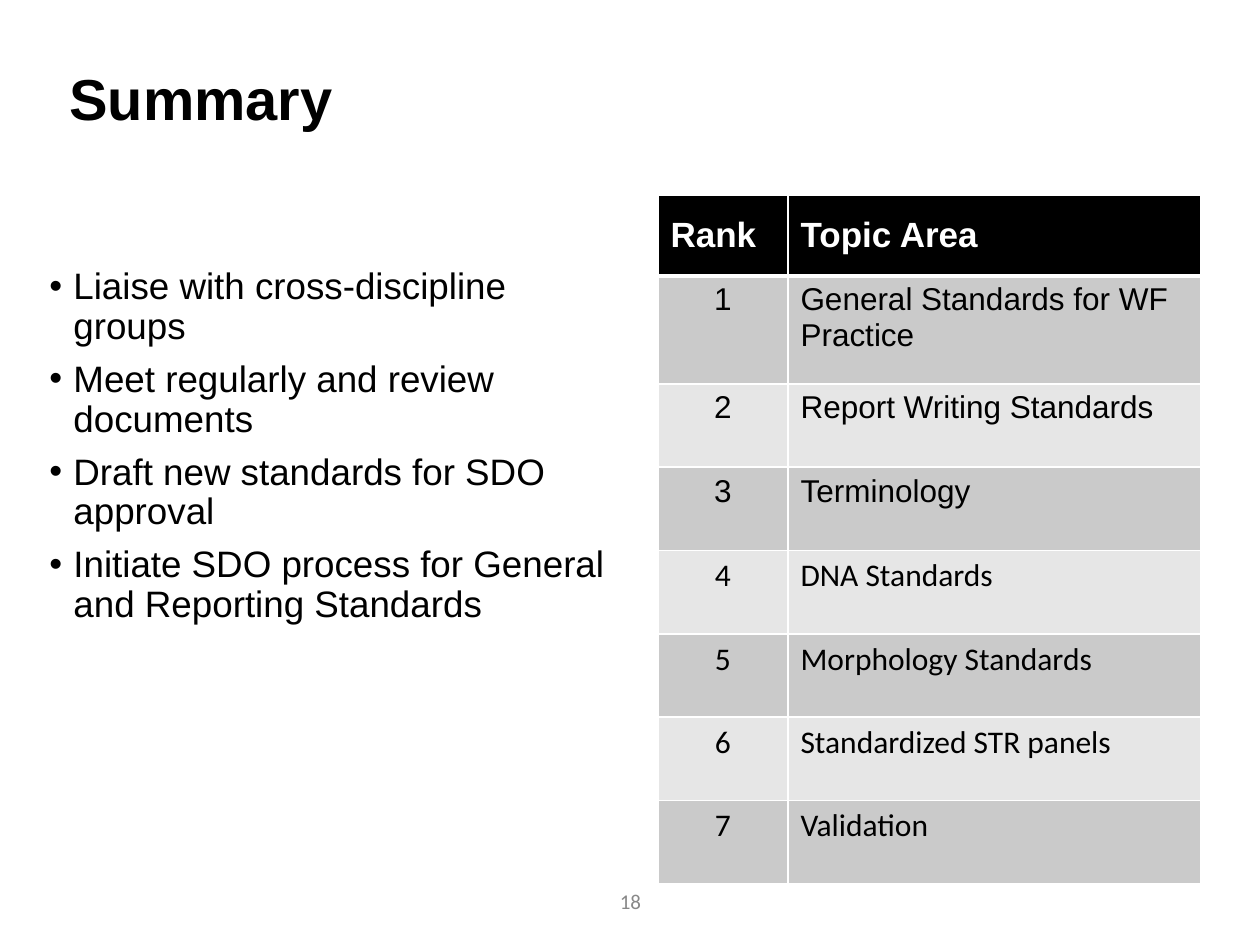
from lxml import etree
from pptx import Presentation
from pptx import util as u
from pptx.dml.color import RGBColor
from pptx.enum import text
from pptx.oxml import ns

PX = 914400 / 126
BLACK = RGBColor(0x00, 0x00, 0x00)
WHITE = RGBColor(0xFF, 0xFF, 0xFF)
DARK_BAND = RGBColor(0xCA, 0xCA, 0xCA)
LIGHT_BAND = RGBColor(0xE6, 0xE6, 0xE6)
PAGE_GRAY = RGBColor(0x88, 0x88, 0x88)
CENTER = text.PP_ALIGN.CENTER
MIDDLE = text.MSO_ANCHOR.MIDDLE

BULLETS = [
    "Liaise with cross-discipline groups",
    "Meet regularly and review documents",
    "Draft new standards for SDO approval",
    "Initiate SDO process for General and Reporting Standards",
]
TOPICS = [
    ("General Standards for WF Practice", "Arial"),
    ("Report Writing Standards", "Arial"),
    ("Terminology", "Arial"),
    ("DNA Standards", "Calibri"),
    ("Morphology Standards", "Calibri"),
    ("Standardized STR panels", "Calibri"),
    ("Validation", "Calibri"),
]


def px(length):
    return u.Emu(round(length * PX))


def write(para, words, size, font="Arial", color=BLACK, bold=False, align=None, spacing=None):
    span = para.add_run()
    span.text = words
    span.font.name = font
    span.font.size = u.Pt(size)
    span.font.bold = bold
    span.font.color.rgb = color
    para.alignment = align
    para.line_spacing = spacing


def add_frame(page, box, anchor=text.MSO_ANCHOR.TOP):
    """Add a wrapping text box and return its text frame."""
    frame = page.shapes.add_textbox(*map(px, box)).text_frame
    frame.word_wrap = True
    frame.vertical_anchor = anchor
    return frame


def add_line(page, box, words, size, **format):
    write(add_frame(page, box, MIDDLE).paragraphs[0], words, size, **format)


def set_bullet(para, indent):
    props = para._p.get_or_add_pPr()
    props.set("marL", str(px(indent)))
    props.set("indent", str(-px(indent)))
    color = etree.SubElement(props, ns.qn("a:buClr"))
    etree.SubElement(color, ns.qn("a:srgbClr"), val=str(BLACK))
    etree.SubElement(props, ns.qn("a:buFont"), typeface="Arial")
    etree.SubElement(props, ns.qn("a:buChar"), char="•")


def add_bullets(page, box, items):
    frame = add_frame(page, box)
    for index, item in enumerate(items):
        para = frame.add_paragraph() if index else frame.paragraphs[0]
        set_bullet(para, 24)
        write(para, item, 21, spacing=0.9)
        if index:
            para.space_before = u.Pt(7.5)


def set_borders(cell, **widths):
    """Draw white cell borders, with widths in points by side."""
    props = cell._tc.get_or_add_tcPr()
    for index, side in enumerate("LRTB"):
        line = etree.Element(ns.qn(f"a:ln{side}"), w=str(u.Pt(widths.get(side, 1))))
        fill = etree.SubElement(line, ns.qn("a:solidFill"))
        etree.SubElement(fill, ns.qn("a:srgbClr"), val=str(WHITE))
        props.insert(index, line)


def fill_cell(cell, fill, words, size, **format):
    cell.fill.solid()
    cell.fill.fore_color.rgb = fill
    write(cell.text_frame.paragraphs[0], words, size, **format)


def add_ranking(page, box, topics):
    left, top, width, height = box
    table = page.shapes.add_table(len(topics) + 1, 2, *map(px, box)).table
    rank_width, header_height, first_height = 130, 81, 108
    table.columns[0].width = px(rank_width)
    table.columns[1].width = px(width - rank_width)
    rest = (height - header_height - first_height) / (len(topics) - 1)
    heights = [header_height, first_height] + [rest] * (len(topics) - 1)
    for row, row_height in zip(table.rows, heights):
        row.height = px(row_height)

    for column, words in enumerate(("Rank", "Topic Area")):
        cell = table.cell(0, column)
        cell.vertical_anchor = MIDDLE
        fill_cell(cell, BLACK, words, 20, color=WHITE, bold=True)
        set_borders(cell, B=3)

    for rank, (topic, font) in enumerate(topics, 1):
        band = DARK_BAND if rank % 2 else LIGHT_BAND
        for column, (words, align) in enumerate(((str(rank), CENTER), (topic, None))):
            cell = table.cell(rank, column)
            fill_cell(cell, band, words, 18, font=font, align=align)
            set_borders(cell, T=3 if rank == 1 else 1)


def add_summary(deck):
    page = deck.slides.add_slide(deck.slide_layouts[6])
    add_line(page, (57, 10, 1086, 183), "Summary", 33, bold=True, spacing=0.9)
    add_ranking(page, (658, 195, 543, 689), TOPICS)
    add_line(page, (489, 876, 283, 50), "18", 12, font="Calibri", color=PAGE_GRAY, align=CENTER)
    add_bullets(page, (37, 262, 598, 449), BULLETS)


def main():
    deck = Presentation()
    deck.slide_width, deck.slide_height = px(1260), px(945)
    add_summary(deck)
    deck.save("out.pptx")


if __name__ == "__main__":
    main()
